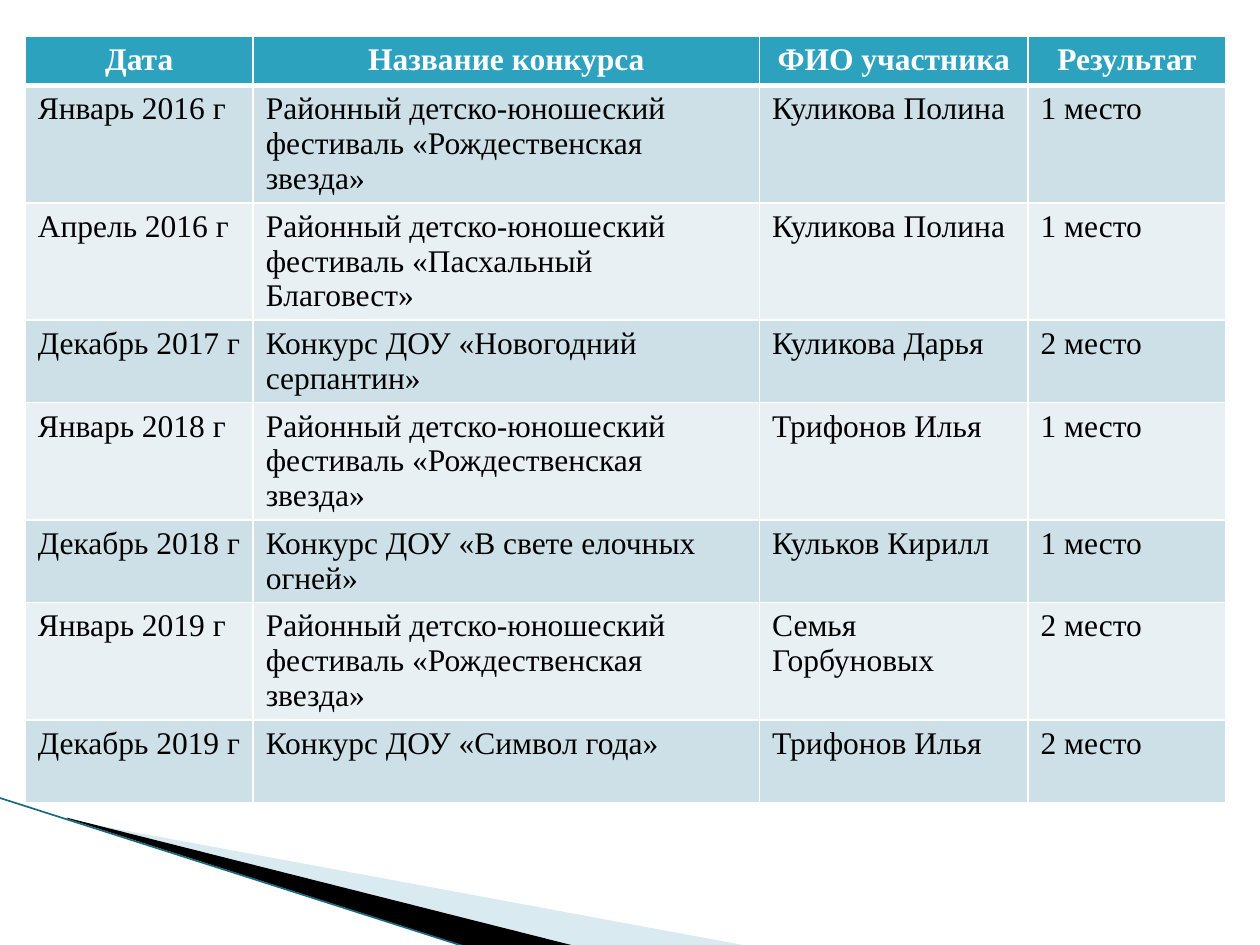
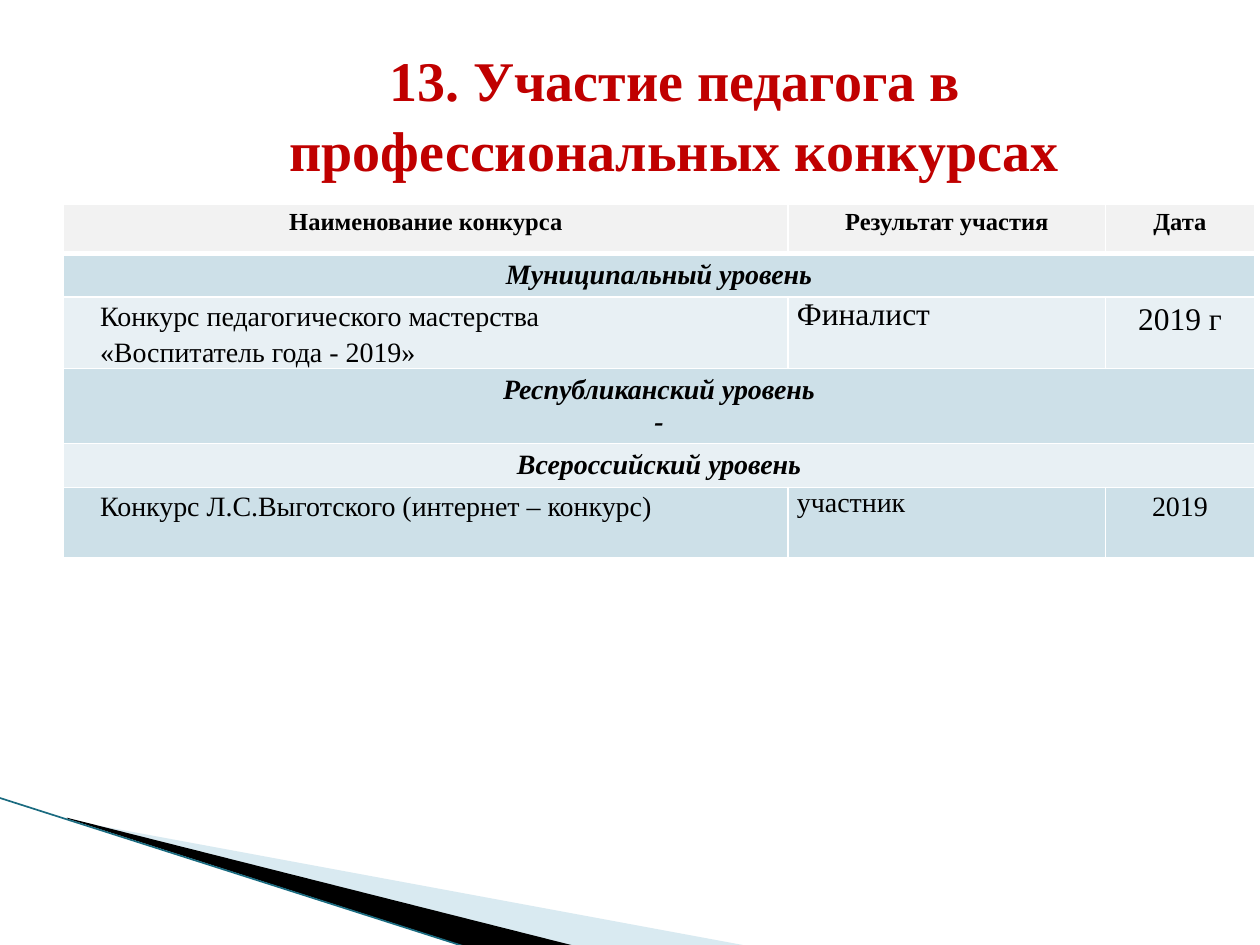
"""Build two slides listing contest results of pupils and of their teacher."""
from lxml import etree
from pptx import Presentation
from pptx.dml.color import RGBColor
from pptx.enum.shapes import MSO_CONNECTOR
from pptx.enum.text import MSO_ANCHOR, MSO_AUTO_SIZE, PP_ALIGN
from pptx.oxml import parse_xml
from pptx.oxml.ns import qn
from pptx.util import Pt

LEFT, CENTER, JUSTIFY = PP_ALIGN.LEFT, PP_ALIGN.CENTER, PP_ALIGN.JUSTIFY
TOP, NO_AUTOFIT = MSO_ANCHOR.TOP, MSO_AUTO_SIZE.NONE
STRAIGHT = MSO_CONNECTOR.STRAIGHT
FONT = "Times New Roman"
BLACK, WHITE, RED = "000000", "FFFFFF", "C00000"
TEAL, DARK_TEAL, PALE_TEAL = "2DA2BF", "1A6B80", "A0CBDC"
GREY, BANDS = "F2F2F2", ("CDE0E8", "E8F0F4")
NAMESPACE = "http://schemas.openxmlformats.org/drawingml/2006/main"


def paint(fill, colour):
    """Fill with a solid colour given as a hex string."""
    fill.solid()
    fill.fore_color.rgb = RGBColor.from_string(colour)


def write_text(frame, text, size=18, colour=BLACK, bold=False, italic=False,
               align=LEFT, spacing=None, indent=0):
    """Write lines of text as paragraphs in one format."""
    frame.word_wrap = True
    for number, line in enumerate(text.split("\n")):
        paragraph = frame.add_paragraph() if number else frame.paragraphs[0]
        paragraph.alignment = align
        paragraph.space_before = Pt(0)
        if spacing:
            paragraph.line_spacing = spacing
        if indent:
            paragraph._p.get_or_add_pPr().set("marL", str(Pt(indent)))
        run = paragraph.add_run()
        run.text = line
        run.font.name, run.font.size = FONT, Pt(size)
        run.font.bold, run.font.italic = bold, italic
        paint(run.font.fill, colour)


presentation = Presentation()
presentation.slide_width, presentation.slide_height = Pt(720), Pt(540)
pupils = presentation.slides.add_slide(presentation.slide_layouts[6])
teacher = presentation.slides.add_slide(presentation.slide_layouts[5])

wedges = [
    (PALE_TEAL, 40, [(39.6, 468.7), (428.4, 540.7), (328.3, 540.7), (39.6, 468)]),
    (BLACK, 100, [(38.2, 467.3), (329, 540.7), (267.8, 541.4), (38.9, 468)]),
]
for slide in (pupils, teacher):
    for colour, opacity, corners in wedges:
        points = [(Pt(x), Pt(y)) for x, y in corners]
        outline = slide.shapes.build_freeform(*points[0], scale=1.0)
        outline.add_line_segments(points[1:], close=True)
        wedge = outline.convert_to_shape()
        wedge.shadow.inherit = False
        wedge.line.fill.background()
        paint(wedge.fill, colour)
        if opacity < 100:
            tint = wedge._element.spPr.find(".//" + qn("a:srgbClr"))
            etree.SubElement(tint, qn("a:alpha")).set("val", str(opacity * 1000))
    edge = slide.shapes.add_connector(STRAIGHT, Pt(-0.7), Pt(455.8), Pt(267.1), Pt(541.4))
    edge.line.width = Pt(0.95)
    paint(edge.line.fill, DARK_TEAL)
    etree.SubElement(edge._element.spPr, qn("a:effectLst"))

title = teacher.shapes.title
title.left, title.top, title.width, title.height = Pt(93.6), Pt(20.9), Pt(583.9), Pt(76.3)
title.text_frame.auto_size = NO_AUTOFIT
title.text_frame.vertical_anchor = TOP
write_text(title.text_frame, "13. Участие педагога в профессиональных конкурсах",
           size=32, colour=RED, bold=True, align=CENTER, spacing=1.04)

christmas = "Районный детско-юношеский фестиваль «Рождественская звезда»"
easter = "Районный детско-юношеский фестиваль «Пасхальный Благовест»"
pupil_results = [
    ("Январь 2016 г", christmas, "Куликова Полина", "1 место"),
    ("Апрель 2016 г", easter, "Куликова Полина", "1 место"),
    ("Декабрь 2017 г", "Конкурс ДОУ «Новогодний серпантин»", "Куликова Дарья", "2 место"),
    ("Январь 2018 г", christmas, "Трифонов Илья", "1 место"),
    ("Декабрь 2018 г", "Конкурс ДОУ «В свете елочных огней»", "Кульков Кирилл", "1 место"),
    ("Январь 2019 г", christmas, "Семья Горбуновых", "2 место"),
    ("Декабрь 2019 г", "Конкурс ДОУ «Символ года»", "Трифонов Илья", "2 место"),
]
pupil_head = dict(colour=WHITE, bold=True, align=CENTER)
pupil_rows = [[(text, pupil_head) for text in
               ("Дата", "Название конкурса", "ФИО участника", "Результат")]]
pupil_rows += [[(text, {}) for text in result] for result in pupil_results]
pupil_heights = [28] + [67 if "фестиваль" in result[1] else 47.2 for result in pupil_results]

teacher_head = dict(size=14, bold=True, align=CENTER, spacing=1.15)
level = dict(size=16, bold=True, italic=True, align=CENTER)
contest = dict(size=16, align=JUSTIFY, spacing=1.15, indent=15.8)
teacher_rows = [
    [(text, teacher_head) for text in ("Наименование конкурса", "Результат участия", "Дата")],
    [("Муниципальный уровень", level)],
    [("Конкурс педагогического мастерства\n«Воспитатель года - 2019»", contest),
     ("Финалист", {}), ("2019 г", dict(align=CENTER, spacing=1.15))],
    [("Республиканский уровень\n-", level)],
    [("Всероссийский уровень", level)],
    [("Конкурс Л.С.Выготского (интернет – конкурс)", contest),
     ("участник", dict(size=16)), ("2019", dict(size=16, align=CENTER, spacing=1.15))],
]
teacher_heights = [28, 25, 40.5, 42.6, 25, 40.3]

tables = [
    (pupils, 14.4, 20.9, [130.3, 289.4, 153.4, 113], pupil_heights, pupil_rows, TEAL, 7.2, 3.6),
    (teacher, 36.4, 116.8, [414, 181.4, 85], teacher_heights, teacher_rows, GREY, 5, 0),
]
for slide, left, top, widths, heights, rows, head_colour, side, edge_gap in tables:
    results = slide.shapes.add_table(len(rows), len(widths), Pt(left), Pt(top),
                                     Pt(sum(widths)), Pt(sum(heights))).table
    for column, width in zip(results.columns, widths):
        column.width = Pt(width)
    for number, (row, height, entries) in enumerate(zip(results.rows, heights, rows)):
        row.height = Pt(height)
        spanned = len(entries) == 1
        for cell in row.cells:
            properties = cell._tc.get_or_add_tcPr()
            for border in ("lnL", "lnR", "lnT", "lnB"):
                heavy = (number == 0 and border == "lnB") or (number == 1 and border == "lnT")
                properties.append(parse_xml(
                    f'<a:{border} xmlns:a="{NAMESPACE}" w="{Pt(3 if heavy else 1)}">'
                    f'<a:solidFill><a:srgbClr val="{WHITE}"/></a:solidFill></a:{border}>'))
            paint(cell.fill, BANDS[(number - 1) % 2] if number else head_colour)
            cell.vertical_anchor = TOP
            cell.margin_left = cell.margin_right = Pt(7.2 if spanned else side)
            cell.margin_top = cell.margin_bottom = Pt(3.6 if spanned else edge_gap)
        if spanned:
            results.cell(number, 0).merge(results.cell(number, len(widths) - 1))
        for cell, (text, style) in zip(row.cells, entries):
            write_text(cell.text_frame, text, **style)

presentation.save("out.pptx")
